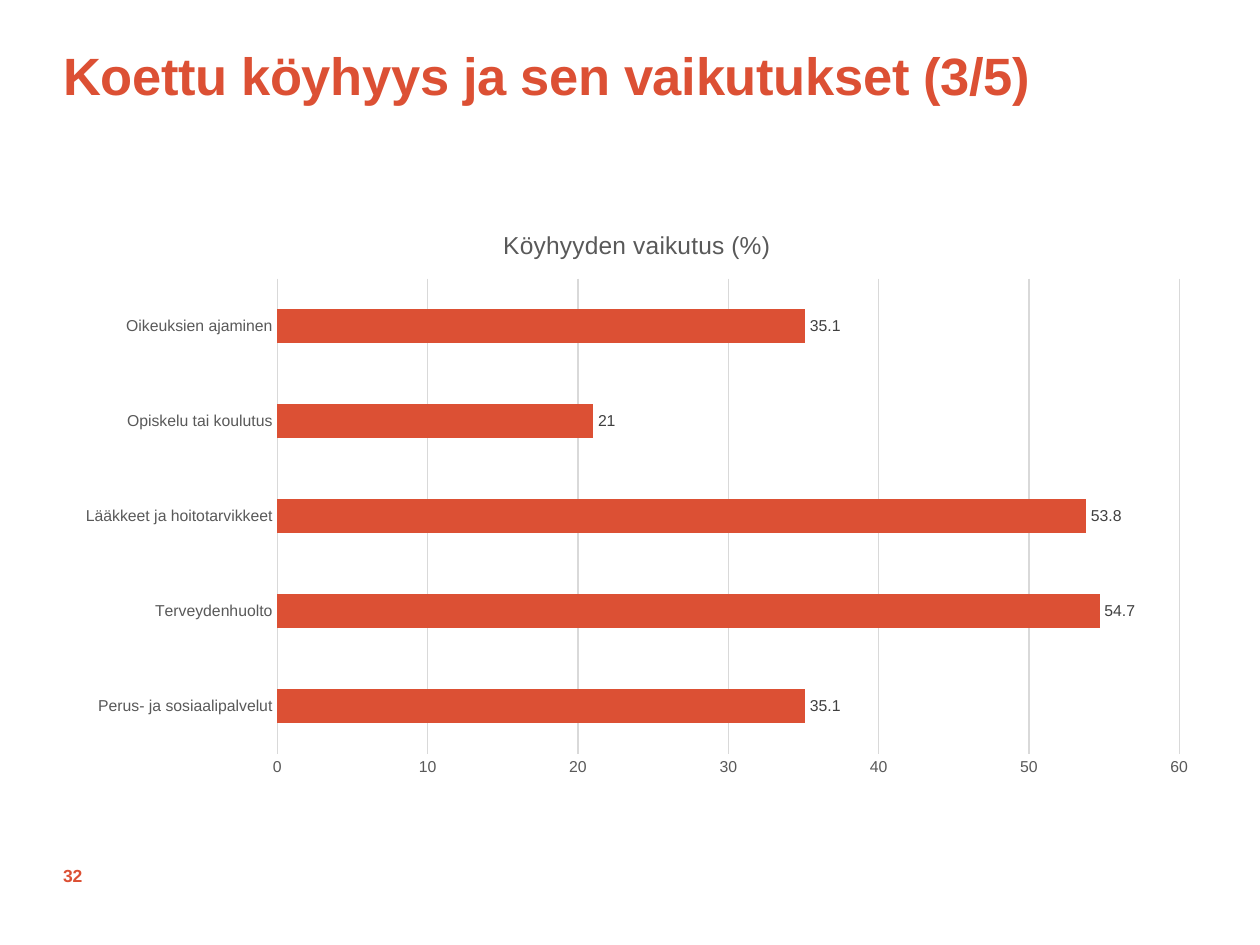
from dataclasses import dataclass

import pptx
import pptx.chart.data
import pptx.dml.color
import pptx.enum.chart
import pptx.enum.text
import pptx.oxml
import pptx.oxml.ns
import pptx.util

Pt = pptx.util.Pt
RGBColor = pptx.dml.color.RGBColor


@dataclass(frozen=True)
class Theme:
    font: str = "Arial"
    accent: RGBColor = RGBColor(0xDC, 0x50, 0x34)
    axis_text: RGBColor = RGBColor(0x59, 0x59, 0x59)
    label_text: RGBColor = RGBColor(0x40, 0x40, 0x40)
    grid: RGBColor = RGBColor(0xD9, 0xD9, 0xD9)
    title_size: int = 30
    chart_title_size: int = 14
    number_size: int = 10
    chart_size: int = 9


THEME = Theme()

IMPACTS = {
    "Perus- ja sosiaalipalvelut": 35.1,
    "Terveydenhuolto": 54.7,
    "Lääkkeet ja hoitotarvikkeet": 53.8,
    "Opiskelu tai koulutus": 21,
    "Oikeuksien ajaminen": 35.1,
}


def style_font(font, size, color, bold=False):
    font.name = THEME.font
    font.size = Pt(size)
    font.bold = bold
    font.color.rgb = color


def fill_text(text_frame, text, size, anchor, top_inset=0):
    """Write one bold accent run, left aligned, and return it."""
    text_frame.word_wrap = True
    text_frame.auto_size = pptx.enum.text.MSO_AUTO_SIZE.NONE
    text_frame.vertical_anchor = anchor
    text_frame.margin_left = text_frame.margin_right = text_frame.margin_bottom = 0
    text_frame.margin_top = Pt(top_inset)
    paragraph = text_frame.paragraphs[0]
    paragraph.alignment = pptx.enum.text.PP_ALIGN.LEFT
    run = paragraph.add_run()
    run.text = text
    style_font(run.font, size, THEME.accent, bold=True)
    return run


def place_title(slide, left, top, width, height):
    title = slide.shapes.title
    title.left, title.top, title.width, title.height = map(Pt, (left, top, width, height))
    run = fill_text(title.text_frame, "Koettu köyhyys ja sen vaikutukset (3/5)",
                    THEME.title_size, pptx.enum.text.MSO_ANCHOR.TOP, top_inset=3)
    run.font._element.set("spc", "-20")


def add_page_number(slide, left, top, width, height):
    box = slide.shapes.add_textbox(*map(Pt, (left, top, width, height)))
    fill_text(box.text_frame, "32", THEME.number_size, pptx.enum.text.MSO_ANCHOR.MIDDLE)


def style_axis(axis):
    axis.major_tick_mark = axis.minor_tick_mark = pptx.enum.chart.XL_TICK_MARK.NONE
    style_font(axis.tick_labels.font, THEME.chart_size, THEME.axis_text)


def style_line(line):
    line.color.rgb = THEME.grid
    line.width = Pt(0.75)


def add_impact_chart(slide, left, top, width, height):
    data = pptx.chart.data.CategoryChartData()
    data.categories = list(IMPACTS)
    data.add_series("Series 1", list(IMPACTS.values()))
    chart = slide.shapes.add_chart(pptx.enum.chart.XL_CHART_TYPE.BAR_CLUSTERED,
                                   *map(Pt, (left, top, width, height)), data).chart
    chart.font.name = THEME.font
    chart.font.size = Pt(THEME.chart_size)
    chart.has_legend = False
    chart.has_title = True
    run = chart.chart_title.text_frame.paragraphs[0].add_run()
    run.text = "Köyhyyden vaikutus (%)"
    style_font(run.font, THEME.chart_title_size, THEME.axis_text)
    chart.chart_title.include_in_layout = False

    style_axis(chart.category_axis)
    style_line(chart.category_axis.format.line)
    style_axis(chart.value_axis)
    chart.value_axis.format.line.fill.background()
    chart.value_axis.minimum_scale = 0
    chart.value_axis.maximum_scale = 60
    chart.value_axis.major_unit = 10
    style_line(chart.value_axis.major_gridlines.format.line)

    plot = chart.plots[0]
    plot.gap_width = 182
    plot.vary_by_categories = False
    series = plot.series[0]
    series.invert_if_negative = False
    series.format.fill.solid()
    series.format.fill.fore_color.rgb = THEME.accent
    labels = series.data_labels
    labels.show_value = True
    labels.position = pptx.enum.chart.XL_LABEL_POSITION.OUTSIDE_END
    style_font(labels.font, THEME.chart_size, THEME.label_text)


def main():
    presentation = pptx.Presentation()
    presentation.slide_width = Pt(720)
    presentation.slide_height = Pt(540)
    title_only = presentation.slide_layouts[5]
    slide = presentation.slides.add_slide(title_only)
    margin = 36
    place_title(slide, margin, 21.6, 648, 83.5)
    add_page_number(slide, margin, 486, 51, 28.8)
    add_impact_chart(slide, margin, 118, 656, 332.6)
    presentation.save("out.pptx")


if __name__ == "__main__":
    main()
